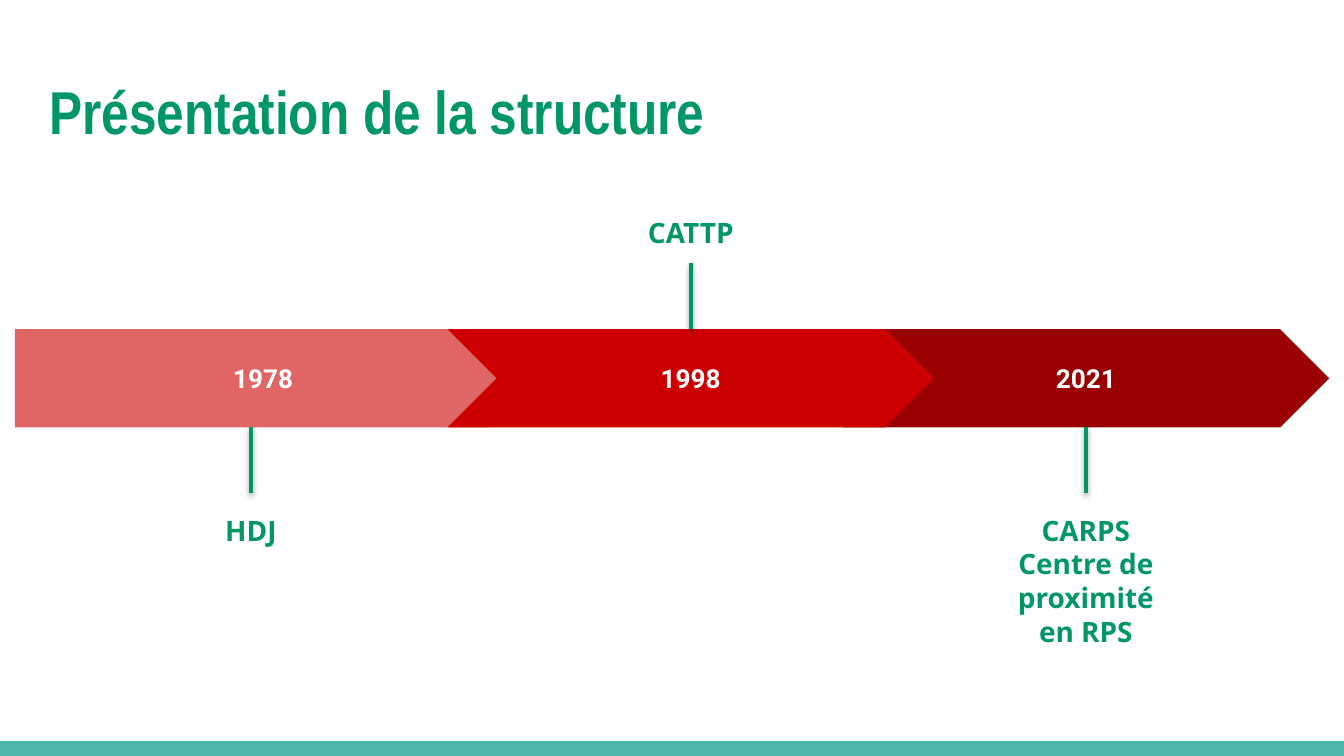
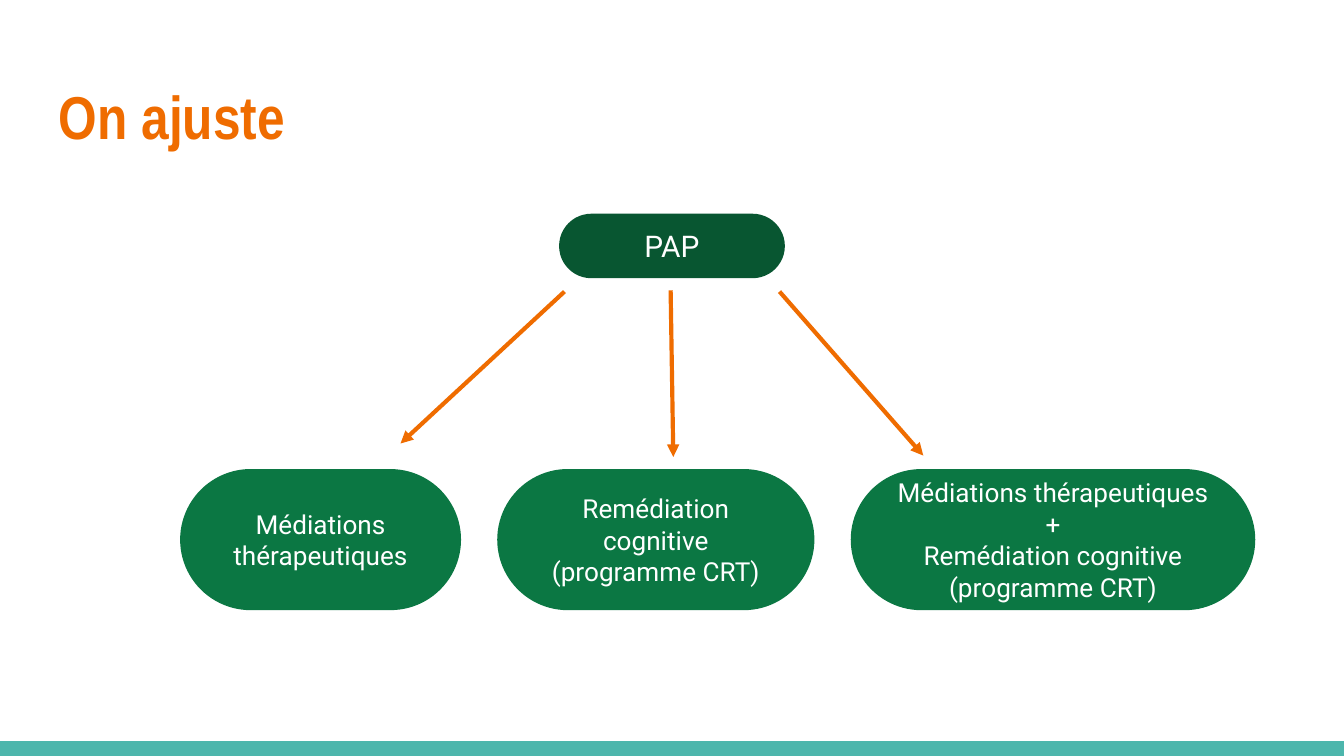
import collections

import lxml.etree
import pptx
import pptx.dml.color
import pptx.enum.dml
import pptx.enum.shapes
import pptx.enum.text
import pptx.oxml.ns
import pptx.util

Inches = pptx.util.Inches
Pt = pptx.util.Pt
RGBColor = pptx.dml.color.RGBColor
Shape = pptx.enum.shapes.MSO_SHAPE
Align = pptx.enum.text.PP_ALIGN
Anchor = pptx.enum.text.MSO_ANCHOR
AutoSize = pptx.enum.text.MSO_AUTO_SIZE
qn = pptx.oxml.ns.qn

WHITE = RGBColor(0xFF, 0xFF, 0xFF)
TEAL = RGBColor(0x4D, 0xB6, 0xAC)
GREEN = RGBColor(0x00, 0x96, 0x68)
ORANGE = RGBColor(0xEF, 0x6C, 0x00)
PALE_RED = RGBColor(0xE0, 0x66, 0x66)
RED = RGBColor(0xCC, 0x00, 0x00)
DARK_RED = RGBColor(0x99, 0x00, 0x00)
DARK_GREEN = RGBColor(0x08, 0x56, 0x31)
MID_GREEN = RGBColor(0x0B, 0x77, 0x43)

PAGE_WIDTH = 10
PAGE_HEIGHT = PAGE_WIDTH * 9 / 16

TITLE = {"name": "Arial Narrow", "size": Pt(32.4), "bold": True}
YEAR = {"name": "Roboto", "size": Pt(14), "bold": True}
LABEL = {"name": "Open Sans", "size": Pt(15), "bold": True}
ROOT = {"name": "Roboto", "size": Pt(16), "bold": False}
BRANCH = {"name": "Roboto", "size": Pt(14), "bold": False}

Box = collections.namedtuple("Box", "left top width height")


def place(box):
    return [Inches(length) for length in box]


def write(shape, lines, style, color, align=Align.CENTER, anchor=Anchor.MIDDLE):
    frame = shape.text_frame
    settings = {"word_wrap": True, "vertical_anchor": anchor}
    for side in ("left", "top", "right", "bottom"):
        settings[f"margin_{side}"] = Inches(0.1)
    for name, value in settings.items():
        setattr(frame, name, value)
    for index, line in enumerate(lines):
        para = frame.add_paragraph() if index else frame.paragraphs[0]
        para.alignment = align
        span = para.add_run()
        span.text = line
        for name, value in style.items():
            setattr(span.font, name, value)
        span.font.color.rgb = color


def add_block(page, kind, box, color):
    shape = page.shapes.add_shape(kind, *place(box))
    shape.shadow.inherit = False
    shape.fill.solid()
    shape.fill.fore_color.rgb = color
    shape.line.fill.background()
    return shape


def add_text(page, box, lines, style, color, align=Align.CENTER):
    shape = page.shapes.add_textbox(*place(box))
    write(shape, lines, style, color, align, Anchor.TOP)
    return shape


def add_line(page, start, end, color, width):
    line = page.shapes.add_connector(
        pptx.enum.shapes.MSO_CONNECTOR.STRAIGHT, *place(start + end))
    line.line.color.rgb = color
    line.line.width = Pt(width)
    effects = lxml.etree.SubElement(line._element.spPr, qn("a:effectLst"))
    return line, effects


def add_stem(page, start, end):
    effects = add_line(page, start, end, GREEN, 2)[1]
    shadow = lxml.etree.SubElement(
        effects, qn("a:outerShdw"), blurRad=str(Pt(3.1)), dist=str(Pt(1.6)),
        dir="5400000", rotWithShape="0")
    black = lxml.etree.SubElement(shadow, qn("a:srgbClr"), val="000000")
    lxml.etree.SubElement(black, qn("a:alpha"), val="38000")


def add_arrow(page, start, end):
    line = add_line(page, start, end, ORANGE, 2.25)[0]
    lxml.etree.SubElement(line.line._get_or_add_ln(), qn("a:tailEnd"), type="triangle")


def start_page(deck, title, box, color):
    page = deck.slides.add_slide(deck.slide_layouts[6])
    page.background.fill.solid()
    page.background.fill.fore_color.rgb = WHITE
    band = 0.11
    add_block(page, Shape.RECTANGLE, Box(0, PAGE_HEIGHT - band, PAGE_WIDTH, band), TEAL)
    add_text(page, box, [title], TITLE, color, Align.LEFT)
    return page


def add_callout(page, box, center, lines, above):
    stem, label_width, label_height = 0.49, 1.33, 0.45
    if above:
        start, end = box.top - stem, box.top
        label_top = start - label_height - 0.01
    else:
        start = box.top + box.height
        end = start + stem
        label_top = end + 0.05
    add_stem(page, (center, start), (center, end))
    label = Box(center - label_width / 2, label_top, label_width,
                1.21 if len(lines) > 1 else label_height)
    shape = add_text(page, label, lines, LABEL, GREEN)
    shape.text_frame.auto_size = AutoSize.SHAPE_TO_FIT_TEXT


def add_timeline(page, box):
    tip = box.height / 2
    steps = [
        ("2021", Shape.CHEVRON, 6.16, 3.62, DARK_RED),
        ("1978", Shape.PENTAGON, 0, 3.88, PALE_RED),
        ("1998", Shape.CHEVRON, 3.22, 3.62, RED),
    ]
    centers = {}
    for year, kind, offset, width, color in steps:
        left = box.left + offset
        step = add_block(page, kind, Box(left, box.top, width, box.height), color)
        step.adjustments[0] = 0.5
        write(step, [year], YEAR, WHITE)
        body = width - tip if kind == Shape.PENTAGON else width
        centers[year] = left + body / 2
    add_callout(page, box, centers["1978"], ["HDJ"], above=False)
    add_callout(page, box, centers["2021"],
                ["CARPS", "Centre de proximité en RPS"], above=False)
    add_callout(page, box, centers["1998"], ["CATTP"], above=True)


def add_pill(page, box, lines, style, color):
    pill = add_block(page, Shape.ROUNDED_RECTANGLE, box, color)
    pill.adjustments[0] = 0.5
    write(pill, lines, style, WHITE)


def add_tree(page, box):
    add_pill(page, Box(box.left + 2.82, box.top, 1.68, 0.48), ["PAP"], ROOT, DARK_GREEN)
    height, gap = 1.05, 0.27
    left, top = box.left, box.top + box.height - height
    program = "Remédiation cognitive (programme CRT)"
    branches = [
        (2.09, ["Médiations thérapeutiques"]),
        (2.36, [program]),
        (3.01, ["Médiations thérapeutiques", "+", program]),
    ]
    for width, lines in branches:
        add_pill(page, Box(left, top, width, height), lines, BRANCH, MID_GREEN)
        left += width + gap
    arrows = [((2.86, 0.58), (1.64, 1.71)),
              ((3.65, 0.57), (3.67, 1.81)),
              ((4.46, 0.58), (5.53, 1.8))]
    for ends in arrows:
        add_arrow(page, *[(box.left + x, box.top + y) for x, y in ends])


def main():
    deck = pptx.Presentation()
    deck.slide_width = Inches(PAGE_WIDTH)
    deck.slide_height = Inches(PAGE_HEIGHT)
    page = start_page(deck, "Présentation de la structure",
                      Box(0.27, 0.45, 9.32, 0.77), GREEN)
    add_timeline(page, Box(0.11, 2.45, 9.78, 0.73))
    page = start_page(deck, "On ajuste", Box(0.34, 0.49, 2.01, 0.65), ORANGE)
    add_tree(page, Box(1.34, 1.59, 8, 2.95))
    deck.save("out.pptx")


if __name__ == "__main__":
    main()
